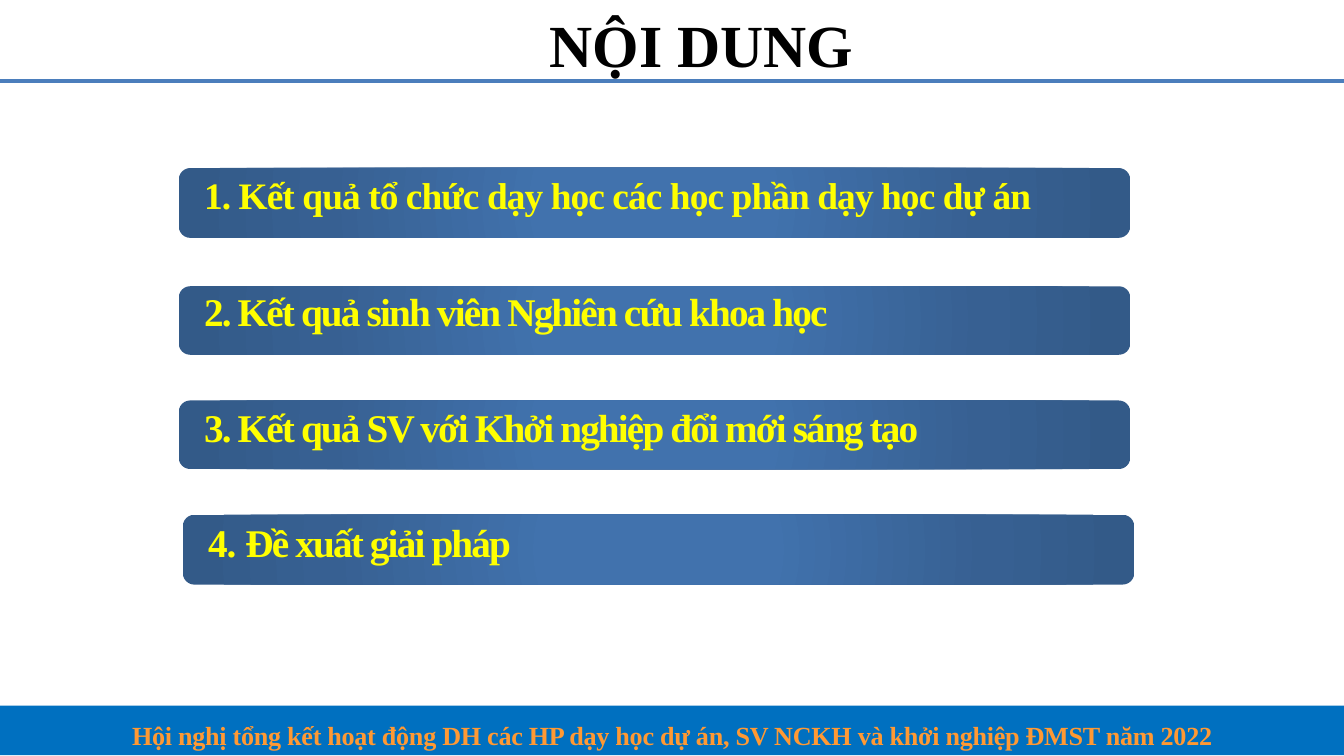
from pptx import Presentation
from pptx import util as u
from pptx.dml.color import RGBColor
from pptx.enum import shapes, text
from pptx.oxml import parse_xml
from pptx.oxml.ns import nsdecls, qn

COLORS = {"band": "0070C0", "rule": "4B7EBC", "footer": "FF9933",
          "title": "000000", "item": "FFFF00"}
BAR_STOPS = [(0, "4172AD"), (23, "4172AD"), (69, "376092"), (97, "335A88")]


def write(p, words, size, color, spacing=0):
    r = p.add_run()
    r.text = words
    r.font.name = "Times New Roman"
    r.font.size = u.Pt(size)
    r.font.bold = True
    r.font.color.rgb = RGBColor.from_string(COLORS[color])
    if spacing:
        r._r.get_or_add_rPr().set("spc", str(round(spacing * 100)))


class Deck:
    def __init__(self):
        self.prs = Presentation()
        self.prs.slide_width = u.Inches(10)
        self.prs.slide_height = u.Inches(10) * 9 // 16
        self.s = self.prs.slides.add_slide(self.prs.slide_layouts[1])

    def shape(self, parent, kind, box):
        sp = parent.add_shape(kind, *map(u.Inches, box))
        sp.shadow.inherit = False
        sp.line.fill.background()
        return sp

    def band(self, box):
        sp = self.shape(self.s.shapes, shapes.MSO_SHAPE.RECTANGLE, box)
        sp.fill.solid()
        sp.fill.fore_color.rgb = RGBColor.from_string(COLORS["band"])

    def rule(self, y):
        cn = self.s.shapes.add_connector(
            shapes.MSO_CONNECTOR.STRAIGHT, 0, u.Inches(y), self.prs.slide_width, u.Inches(y))
        cn.line.color.rgb = RGBColor.from_string(COLORS["rule"])
        cn.line.width = u.Pt(2)
        cn._element.spPr.append(parse_xml(f"<a:effectLst {nsdecls('a')}/>"))

    def placeholder(self, idx, box, words, size, color, line, anchor, spacing=0, indent=0):
        sp = self.s.placeholders[idx]
        sp.left, sp.top, sp.width, sp.height = map(u.Inches, box)
        self.s.shapes._spTree.append(sp._element)
        tf = sp.text_frame
        tf.auto_size = text.MSO_AUTO_SIZE.NONE
        tf.vertical_anchor = anchor
        p = tf.paragraphs[0]
        p.alignment = text.PP_ALIGN.CENTER
        p.line_spacing = line
        pPr = p._p.get_or_add_pPr()
        pPr.set("marL", str(u.Inches(indent)))
        pPr.set("indent", "0")
        pPr.append(parse_xml(f"<a:buNone {nsdecls('a')}/>"))
        write(p, words, size, color, spacing)

    def gradient(self, sp):
        sp.fill.gradient()
        stops = "".join(f'<a:gs pos="{pos * 1000}"><a:srgbClr val="{c}"/></a:gs>'
                        for pos, c in BAR_STOPS)
        spPr = sp._element.spPr
        spPr.replace(spPr.find(qn("a:gradFill")), parse_xml(
            f'<a:gradFill {nsdecls("a")} rotWithShape="1"><a:gsLst>{stops}</a:gsLst>'
            '<a:path path="circle"><a:fillToRect l="50000" t="50000" r="50000" b="50000"/>'
            '</a:path></a:gradFill>'))

    def item(self, left, top, height, text_top, size, runs):
        grp = self.s.shapes.add_group_shape().shapes
        bar = self.shape(grp, shapes.MSO_SHAPE.ROUNDED_RECTANGLE, (left, top, 7.08, height))
        self.gradient(bar)
        tb = grp.add_textbox(*map(u.Inches, (left + 0.09, text_top, 6.92, 0.45)))
        tf = tb.text_frame
        tf.word_wrap = True
        tf.auto_size = text.MSO_AUTO_SIZE.SHAPE_TO_FIT_TEXT
        for words, spacing in runs:
            write(tf.paragraphs[0], words, size, "item", spacing)


def main():
    d = Deck()
    d.band((0, 5.25, 10, 0.37))
    d.rule(0.6)
    d.placeholder(1, (0, 5.27, 10, 0.32),
                  "Hội nghị tổng kết hoạt động DH các HP dạy học dự án, "
                  "SV NCKH và khởi nghiệp ĐMST năm 2022",
                  14, "footer", 1.15, text.MSO_ANCHOR.TOP, spacing=-0.18)
    d.placeholder(0, (0, 0.02, 10, 0.51), "NỘI DUNG", 32, "title", 1.2,
                  text.MSO_ANCHOR.MIDDLE, indent=0.44)
    items = [
        (1.33, 1.25, 0.52, 1.23, 20,
         [("1. Kết quả tổ chức dạy học các học phần dạy học dự án", -0.5)]),
        (1.33, 2.13, 0.51, 2.09, 21, [("2. Kết quả sinh viên Nghiên cứu khoa học", -1)]),
        (1.36, 3.83, 0.52, 3.81, 21, [("4. ", -0.5), ("Đề xuất giải pháp", -1)]),
        (1.33, 2.98, 0.51, 2.95, 21, [("3. Kết quả SV với Khởi nghiệp đổi mới sáng tạo", -1)]),
    ]
    for row in items:
        d.item(*row)
    d.prs.save("out.pptx")


if __name__ == "__main__":
    main()
